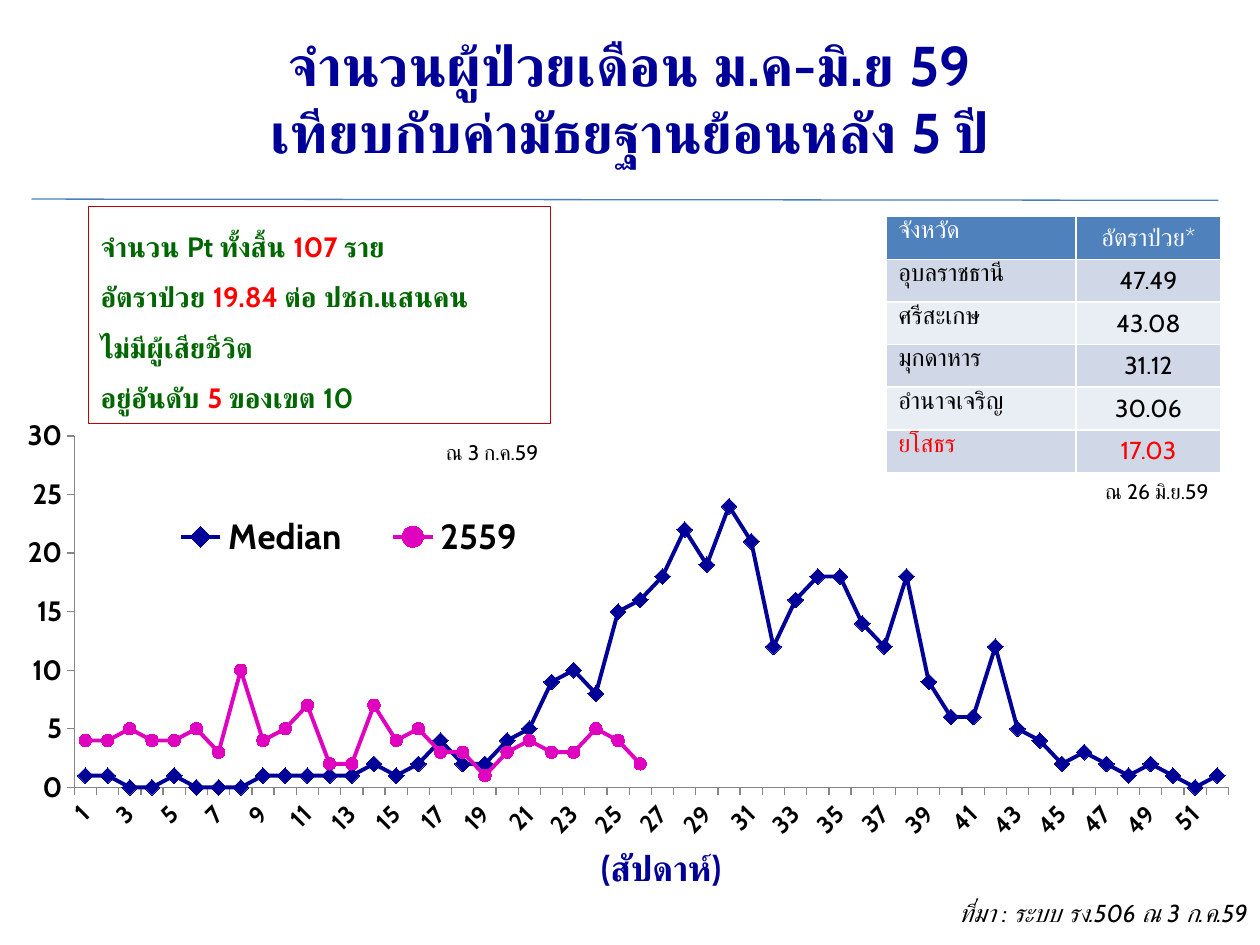
from lxml import etree
from pptx import Presentation
from pptx.chart.data import CategoryChartData
from pptx.dml.color import RGBColor
from pptx.enum.chart import XL_CHART_TYPE as ChartType
from pptx.enum.chart import XL_LEGEND_POSITION as LegendPosition
from pptx.enum.chart import XL_MARKER_STYLE as Marker
from pptx.enum.chart import XL_TICK_MARK as TickMark
from pptx.enum.shapes import MSO_CONNECTOR as Connector
from pptx.enum.shapes import MSO_SHAPE as Shape
from pptx.enum.text import MSO_ANCHOR as Anchor
from pptx.enum.text import PP_ALIGN as Align
from pptx.oxml import parse_xml
from pptx.oxml.ns import nsdecls, qn
from pptx.util import Inches, Pt

FONT = "Cabin"
NAVY, PINK, GREEN, RED = "000099", "DF03C0", "006600", "FF0000"
BLACK, WHITE = "000000", "FFFFFF"

MEDIAN = [1, 1, 0, 0, 1, 0, 0, 0, 1, 1, 1, 1, 1, 2, 1, 2, 4, 2, 2, 4, 5, 9, 10, 8, 15, 16,
          18, 22, 19, 24, 21, 12, 16, 18, 18, 14, 12, 18, 9, 6, 6, 12, 5, 4, 2, 3, 2, 1, 2,
          1, 0, 1]
YEAR_2559 = [4, 4, 5, 4, 4, 5, 3, 10, 4, 5, 7, 2, 2, 7, 4, 5, 3, 3, 1, 3, 4, 3, 3, 5, 4, 2]

SUMMARY = [
    [("จำนวน Pt ทั้งสิ้น ", GREEN), ("107 ", RED), ("ราย", GREEN)],
    [("อัตราป่วย ", GREEN), ("19.84 ", RED), ("ต่อ ปชก.แสนคน", GREEN)],
    [("ไม่มีผู้เสียชีวิต", GREEN)],
    [("อยู่อันดับ ", GREEN), ("5 ", RED), ("ของเขต 10", GREEN)],
]

RATES = [("จังหวัด", "อัตราป่วย*"), ("อุบลราชธานี", "47.49"), ("ศรีสะเกษ", "43.08"),
         ("มุกดาหาร", "31.12"), ("อำนาจเจริญ", "30.06"), ("ยโสธร", "17.03")]


def rgb(value):
    """Turn a hex string into a colour."""
    return RGBColor.from_string(value)


def style_font(font, size, color, bold=False, italic=False):
    """Set size, colour and weight of a font."""
    font.name, font.size, font.bold, font.italic = FONT, Pt(size), bold, italic
    font.color.rgb = rgb(color)


def add_label(slide, box, text, size, color, align=Align.LEFT, anchor=Anchor.TOP,
              bold=False, italic=False):
    """Add a wrapped text box in one style."""
    text_frame = slide.shapes.add_textbox(*map(Inches, box)).text_frame
    text_frame.word_wrap = True
    text_frame.vertical_anchor = anchor
    text_frame.text = text
    for paragraph in text_frame.paragraphs:
        paragraph.alignment = align
        for run in paragraph.runs:
            style_font(run.font, size, color, bold, italic)


def add_rule(slide, box):
    """Draw the thin line under the title."""
    left, top, width, height = box
    line = slide.shapes.add_connector(Connector.STRAIGHT, Inches(left), Inches(top),
                                      Inches(left + width), Inches(top + height))
    line.line.color.rgb = rgb("4B7EBC")
    line.line.width = Pt(0.75)
    etree.SubElement(line._element.spPr, qn("a:effectLst"))


def add_summary(slide, box):
    """Add the framed case summary with its date below."""
    left, top, width, height = box
    frame = slide.shapes.add_shape(Shape.RECTANGLE, *map(Inches, box))
    frame.shadow.inherit = False
    frame.fill.background()
    frame.line.color.rgb = rgb("C00000")
    frame.line.width = Pt(0.75)
    text_frame = frame.text_frame
    text_frame.word_wrap = False
    text_frame.vertical_anchor = Anchor.TOP
    for index, parts in enumerate(SUMMARY):
        paragraph = text_frame.add_paragraph() if index else text_frame.paragraphs[0]
        paragraph.alignment = Align.LEFT
        paragraph.line_spacing = 1.5
        for text, color in parts:
            run = paragraph.add_run()
            run.text = text
            style_font(run.font, 16, color, bold=True)
    add_label(slide, (left + width - 1.48, top + height + 0.08, 1.48, 0.3),
              "ณ 3 ก.ค.59", 12, BLACK, Align.RIGHT)


def add_rates(slide, box):
    """Add the table of provincial rates with its date below."""
    left, top, width, height = box
    table = slide.shapes.add_table(len(RATES), 2, *map(Inches, box)).table
    for column, column_width in zip(table.columns, (1.51, width - 1.51)):
        column.width = Inches(column_width)
    for row, values in enumerate(RATES):
        fill = "4F81BD" if row == 0 else ("E9EDF4", "D0D8E8")[row % 2]
        color = {0: WHITE, len(RATES) - 1: RED}.get(row, BLACK)
        for column, text in enumerate(values):
            cell = table.cell(row, column)
            cell.text = text
            cell.fill.solid()
            cell.fill.fore_color.rgb = rgb(fill)
            cell.vertical_anchor = (Anchor.TOP, Anchor.MIDDLE)[column]
            cell.margin_top = Inches((0.02, 0.05)[column])
            paragraph = cell.text_frame.paragraphs[0]
            paragraph.alignment = (Align.LEFT, Align.CENTER)[column]
            style_font(paragraph.runs[0].font, 14, color)
    add_label(slide, (left + width - 1.48, top + height, 1.48, 0.3),
              "ณ 26 มิ.ย.59", 12, BLACK, Align.RIGHT)


def place_layout(parent, index, chart_box, box, inner=False):
    """Place a chart part at a box in inches within the chart area."""
    x, y, width, height = (part / whole for part, whole in zip(box, chart_box[2:] * 2))
    target = '<c:layoutTarget val="inner"/>' if inner else ""
    for old in parent.findall(qn("c:layout")):
        parent.remove(old)
    parent.insert(index, parse_xml(
        f'<c:layout {nsdecls("c")}><c:manualLayout>{target}'
        f'<c:xMode val="edge"/><c:yMode val="edge"/><c:x val="{x}"/><c:y val="{y}"/>'
        f'<c:w val="{width}"/><c:h val="{height}"/></c:manualLayout></c:layout>'))


def add_weekly_chart(slide, box):
    """Add the weekly line chart with its axis caption."""
    left, top, width, height = box
    weeks = len(MEDIAN)
    data = CategoryChartData()
    data.categories = [str(week) for week in range(1, weeks + 1)]
    data.add_series("Median", MEDIAN)
    data.add_series("2559", YEAR_2559 + [None] * (weeks - len(YEAR_2559)))
    chart = slide.shapes.add_chart(ChartType.LINE_MARKERS, *map(Inches, box), data).chart
    chart.has_title = False
    style_font(chart.font, 10, BLACK)
    plot = chart.plots[0]
    plot.vary_by_categories = False
    looks = ((NAVY, Marker.DIAMOND, 9), (PINK, Marker.CIRCLE, 7))
    for series, (color, marker, size) in zip(plot.series, looks):
        series.smooth = False
        series.format.line.color.rgb = rgb(color)
        series.format.line.width = Pt(2.25)
        series.marker.style, series.marker.size = marker, size
        series.marker.format.fill.solid()
        series.marker.format.fill.fore_color.rgb = rgb(color)
        series.marker.format.line.color.rgb = rgb(color)
    for axis, size in ((chart.category_axis, 14), (chart.value_axis, 16)):
        axis.has_major_gridlines = False
        axis.major_tick_mark = TickMark.OUTSIDE
        axis.format.line.color.rgb = rgb("868686")
        style_font(axis.tick_labels.font, size, BLACK, bold=True)
    value_axis = chart.value_axis
    value_axis.minimum_scale, value_axis.maximum_scale, value_axis.major_unit = 0, 30, 5
    category_axis = chart.category_axis._element
    category_axis.find(qn("c:txPr")).find(qn("a:bodyPr")).set("rot", "-2700000")
    skip = parse_xml(f'<c:tickLblSkip {nsdecls("c")} val="2"/>')
    category_axis.find(qn("c:noMultiLvlLbl")).addprevious(skip)
    chart.has_legend = True
    chart.legend.position = LegendPosition.RIGHT
    chart.legend.include_in_layout = False
    style_font(chart.legend.font, 20, BLACK, bold=True)
    place_layout(chart.legend._element, 1, box, (1.12, 0.78, 3.3, 0.56))
    place_layout(chart._chartSpace.chart.plotArea, 0, box, (0.59, 0.26, 9.16, 2.79),
                 inner=True)
    add_label(slide, (left + 4.67, top + height - 0.03, 2.17, 0.44), "(สัปดาห์)", 20, NAVY,
              bold=True)


def main():
    """Build and save the slide."""
    presentation = Presentation()
    presentation.slide_width, presentation.slide_height = Inches(10), Inches(7.5)
    slide = presentation.slides.add_slide(presentation.slide_layouts[6])
    add_label(slide, (0.5, 0, 9, 1.55),
              "จำนวนผู้ป่วยเดือน ม.ค-มิ.ย 59\vเทียบกับค่ามัธยฐานย้อนหลัง 5 ปี",
              32, NAVY, Align.CENTER, Anchor.MIDDLE, bold=True)
    add_weekly_chart(slide, (0, 3.2, 10, 3.5))
    add_summary(slide, (0.7, 1.64, 3.67, 1.72))
    add_rule(slide, (0.25, 1.58, 9.42, 0.01))
    add_rates(slide, (7.03, 1.72, 2.66, 2.03))
    add_label(slide, (5.75, 7.08, 4.25, 0.34), "ที่มา : ระบบ รง.506 ณ 3 ก.ค.59", 14, BLACK,
              Align.RIGHT, italic=True)
    presentation.save("out.pptx")


if __name__ == "__main__":
    main()
